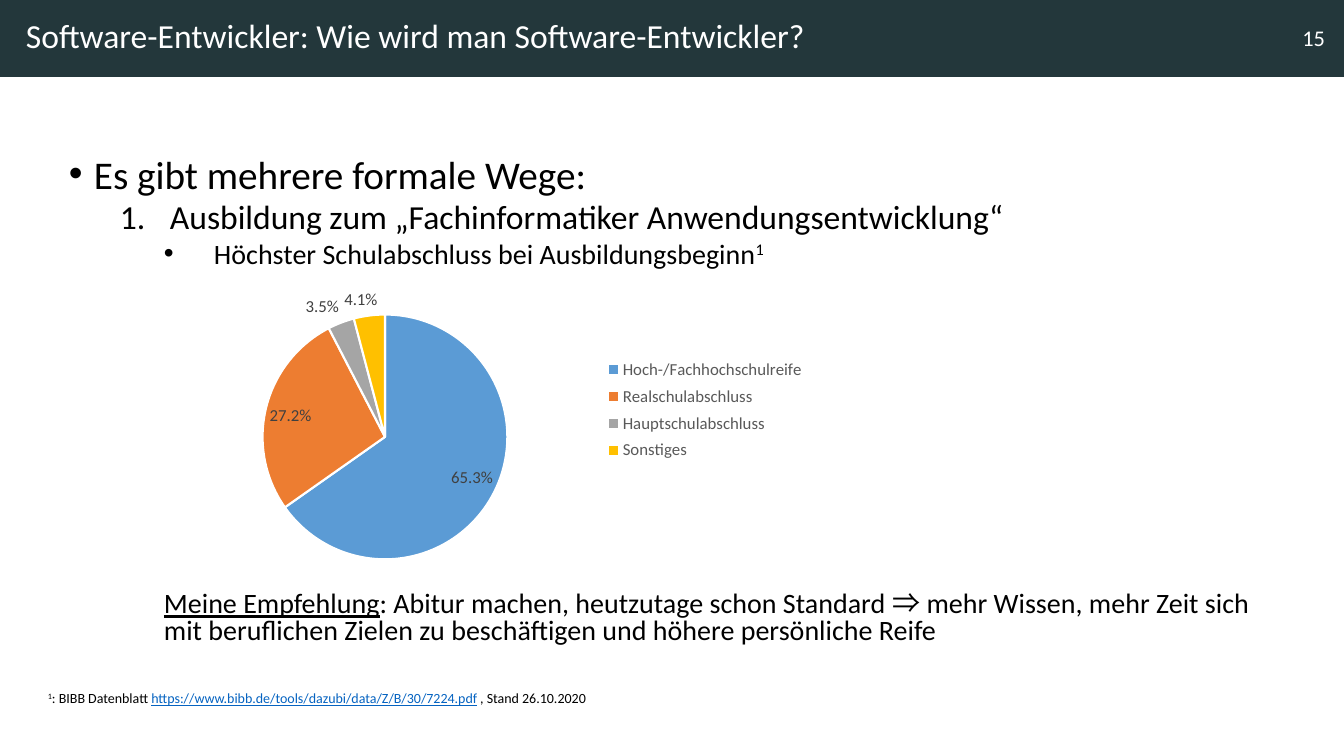
from lxml import etree
from pptx import Presentation
from pptx.chart.data import CategoryChartData
from pptx.dml.color import RGBColor
from pptx.enum.chart import XL_CHART_TYPE, XL_LABEL_POSITION, XL_LEGEND_POSITION
from pptx.enum.shapes import MSO_SHAPE
from pptx.enum.text import MSO_ANCHOR, PP_ALIGN
from pptx.oxml.ns import qn
from pptx.util import Pt

PIE = XL_CHART_TYPE.PIE
BEST_FIT = XL_LABEL_POSITION.BEST_FIT
LEGEND_RIGHT = XL_LEGEND_POSITION.RIGHT
RECT = MSO_SHAPE.RECTANGLE
TOP, MIDDLE = MSO_ANCHOR.TOP, MSO_ANCHOR.MIDDLE
LEFT, RIGHT = PP_ALIGN.LEFT, PP_ALIGN.RIGHT

FONT = "Calibri"
ARROW_FONT = "Noto Sans CJK JP"
BLACK, WHITE, DARK, LINK = "000000", "FFFFFF", "23373B", "0563C1"
LABEL_GREY, LEGEND_GREY = "404040", "595959"

DEGREES = [  # category, share, slice colour
    ("Hoch-/Fachhochschulreife", 0.653, "5B9BD5"),
    ("Realschulabschluss", 0.272, "ED7D31"),
    ("Hauptschulabschluss", 0.035, "A5A5A5"),
    ("Sonstiges", 0.041, "FFC000"),
]


def px(n):
    return round(n * 914400 / 100.8)


def rgb(value):
    return RGBColor.from_string(value)


def style_font(font, size, color, name=FONT):
    font.name, font.size = name, Pt(size)
    font.color.rgb = rgb(color)


def add_bar(slide, x, y, w, h, color):
    s = slide.shapes.add_shape(RECT, px(x), px(y), px(w), px(h))
    s.shadow.inherit = False
    s.fill.solid()
    s.fill.fore_color.rgb = rgb(color)
    s.line.fill.background()


def add_box(slide, x, y, w, h, anchor=TOP, wrap=True):
    tf = slide.shapes.add_textbox(px(x), px(y), px(w), px(h)).text_frame
    tf.word_wrap = wrap
    tf.vertical_anchor = anchor
    return tf


def add_run(p, text, size, color=BLACK, name=FONT, underline=False, raised=False):
    r = p.add_run()
    r.text = text
    style_font(r.font, size, color, name)
    if underline:
        r.font.underline = True
    if raised:
        r.font._element.set("baseline", "30000")


def format_paragraph(p, spacing, before=0, align=LEFT):
    p.line_spacing = spacing
    p.space_before = Pt(before)
    p.alignment = align


def set_bullet(p, margin, hang, tag, **attrs):
    pPr = p._p.get_or_add_pPr()
    pPr.set("marL", str(px(margin)))
    pPr.set("indent", str(-px(hang)))
    if tag == "a:buChar":
        etree.SubElement(pPr, qn("a:buFont")).set("typeface", "Arial")
    etree.SubElement(pPr, qn(tag), attrs)


def set_layout(parent, index, x, y, w, h, inner=False):
    """Place a chart part by fractions of the chart area."""
    for old in parent.findall(qn("c:layout")):
        parent.remove(old)
    layout = etree.Element(qn("c:layout"))
    manual = etree.SubElement(layout, qn("c:manualLayout"))
    values = [("layoutTarget", "inner")] if inner else []
    values += [("xMode", "edge"), ("yMode", "edge"), ("x", x), ("y", y), ("w", w), ("h", h)]
    for tag, value in values:
        etree.SubElement(manual, qn("c:" + tag)).set("val", str(value))
    parent.insert(index, layout)


def add_pie(slide, x, y, w, h):
    data = CategoryChartData(number_format="0.0%")
    data.categories = [name for name, _, _ in DEGREES]
    data.add_series("Schulabschluss", [share for _, share, _ in DEGREES])
    chart = slide.shapes.add_chart(PIE, px(x), px(y), px(w), px(h), data).chart
    style_font(chart.font, 10, BLACK)
    chart.has_title = False

    # Slices and labels
    plot = chart.plots[0]
    plot.vary_by_categories = True
    for i, (_, _, color) in enumerate(DEGREES):
        fmt = plot.series[0].points[i].format
        fmt.fill.solid()
        fmt.fill.fore_color.rgb = rgb(color)
        fmt.line.color.rgb = rgb(WHITE)
        fmt.line.width = Pt(1.5)
    plot.has_data_labels = True
    labels = plot.data_labels
    labels.show_value = True
    labels.show_percentage = False
    labels.number_format, labels.number_format_is_linked = "0.0%", False
    labels.position = BEST_FIT
    style_font(labels.font, 12, LABEL_GREY)

    # Legend and placement
    chart.has_legend = True
    legend = chart.legend
    legend.position = LEGEND_RIGHT
    legend.include_in_layout = False
    style_font(legend.font, 12, LEGEND_GREY)
    set_layout(chart._chartSpace.chart.plotArea, 0, 0.18, 0.13, 0.34, 0.82, inner=True)
    set_layout(legend._element, 1, 0.65, 0.26, 0.29, 0.38)


def add_outline(slide):
    tf = add_box(slide, 59, 154, 1229, 120)
    p = tf.paragraphs[0]
    format_paragraph(p, 0.8, 10)
    set_bullet(p, 25, 25, "a:buChar", char="•")
    add_run(p, "Es gibt mehrere formale Wege:", 28)

    p = tf.add_paragraph()
    format_paragraph(p, 0.8, 5)
    set_bullet(p, 101, 50, "a:buAutoNum", type="arabicPeriod")
    add_run(p, "Ausbildung zum „Fachinformatiker Anwendungsentwicklung“", 24)

    p = tf.add_paragraph()
    format_paragraph(p, 0.8, 5)
    set_bullet(p, 145, 50, "a:buChar", char="•")
    add_run(p, "Höchster Schulabschluss bei Ausbildungsbeginn", 20)
    add_run(p, "1", 20, raised=True)


def main():
    prs = Presentation()
    prs.slide_width, prs.slide_height = px(1344), px(756)
    slide = prs.slides.add_slide(prs.slide_layouts[6])

    # Header
    add_bar(slide, 0, 0, 1344, 77, DARK)
    p = add_box(slide, 16, 10, 1260, 56, MIDDLE).paragraphs[0]
    format_paragraph(p, 0.9)
    add_run(p, "Software-Entwickler: Wie wird man Software-Entwickler?", 24, WHITE)
    p = add_box(slide, 1270, 18, 65, 40, MIDDLE).paragraphs[0]
    format_paragraph(p, 1.0, align=RIGHT)
    add_run(p, "15", 16, WHITE)

    # Body
    add_outline(slide)
    add_pie(slide, 133, 275, 720, 300)

    # Recommendation
    p = add_box(slide, 154, 587, 1134, 70).paragraphs[0]
    format_paragraph(p, 0.8)
    add_run(p, "Meine Empfehlung", 20, underline=True)
    add_run(p, ": Abitur machen, heutzutage schon Standard ", 20)
    add_run(p, "⇒ ", 20, name=ARROW_FONT)
    add_run(p, "mehr Wissen, mehr Zeit sich mit beruflichen Zielen zu beschäftigen "
               "und höhere persönliche Reife", 20)

    # Footnote
    p = add_box(slide, 38, 685, 567, 44, wrap=False).paragraphs[0]
    add_run(p, "1", 10, raised=True)
    add_run(p, ": BIBB Datenblatt ", 10)
    add_run(p, "https://www.bibb.de/tools/dazubi/data/Z/B/30/7224.pdf", 10, LINK, underline=True)
    add_run(p, " , Stand 26.10.2020", 10)

    prs.save("out.pptx")


if __name__ == "__main__":
    main()
